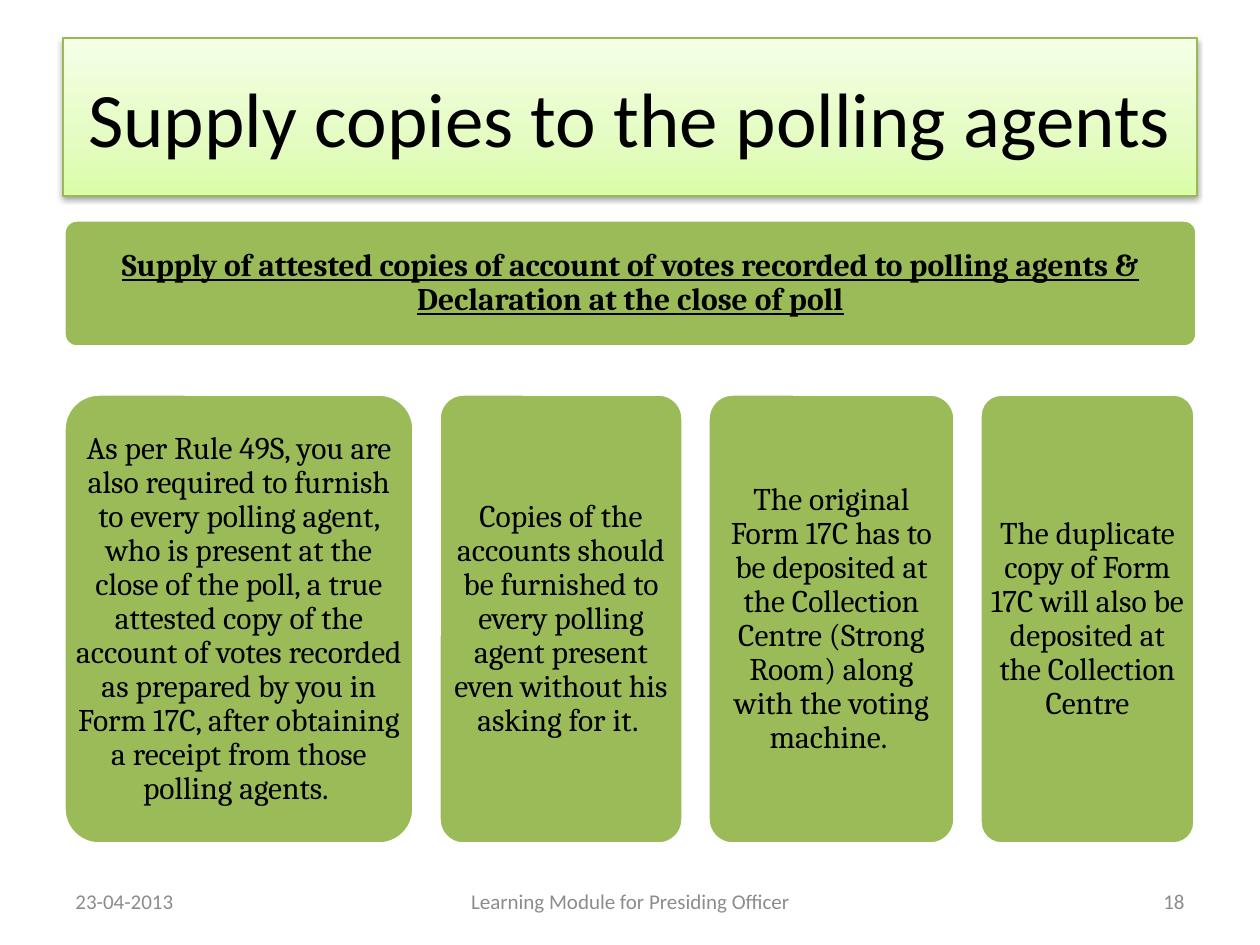
"""Build the slide on supplying copies of the account of votes to polling agents."""
from copy import deepcopy

from lxml import etree
from pptx import Presentation
from pptx import util as u
from pptx.dml.color import RGBColor
from pptx.enum import shapes, text
from pptx.oxml.ns import qn

PX = 914400 / 126
WIDTH, HEIGHT = 1260, 945
LEFT, GAP = 64, 25
BANNER_TOP, BANNER_HEIGHT, BANNER_WIDTH = 220, 127, 1133
CARD_TOP, CARD_HEIGHT = 394, 450
MARGIN, CORNER = 9, 0.1
GREEN, BLACK, WHITE, GREY = "9BBB59", "000000", "FFFFFF", "8C8C8C"

TITLE = "Supply copies to the polling agents"
TITLE_FRAME = (63, 38, 1134, 158)
TITLE_GRADIENT = [(0, "DAFDA7"), (0.35, "E4FCC2"), (1, "F5FFE7")]
BANNER = ("Supply of attested copies of account of votes recorded to polling agents "
          "& Declaration at the close of poll")
CARDS = [
    (350, "As per Rule 49S, you are also required to furnish to every polling agent, "
          "who is present at the close of the poll, a true attested copy of the account "
          "of votes recorded as prepared by you in Form 17C, after obtaining a receipt "
          "from those polling agents. "),
    (244, "Copies of the accounts should be furnished to every polling agent present "
          "even without his asking for it. "),
    (247, "The original Form 17C has to be deposited at the Collection Centre "
          "(Strong Room) along with the voting machine. "),
    (215, "The duplicate copy of Form 17C will also be deposited at the Collection Centre"),
]
FOOTER_TOP, FOOTER_HEIGHT = 876, 50
FOOTERS = [
    (63, 294, "23-04-2013", text.PP_ALIGN.LEFT),
    (431, 399, "Learning Module for Presiding Officer", text.PP_ALIGN.CENTER),
    (903, 294, "18", text.PP_ALIGN.RIGHT),
]


def px(value):
    return u.Emu(round(value * PX))


def color(value):
    return RGBColor.from_string(value)


def write(box, words, font, size, ink, align=text.PP_ALIGN.CENTER):
    frame = box.text_frame
    frame.word_wrap = True
    frame.vertical_anchor = text.MSO_ANCHOR.MIDDLE
    frame.text = words
    para = frame.paragraphs[0]
    para.alignment = align
    span = para.runs[0]
    span.font.name, span.font.size = font, u.Pt(size)
    span.font.color.rgb = color(ink)
    return para


def add_box(page, kind, frame, line, weight):
    box = page.shapes.add_shape(kind, *map(px, frame))
    box.shadow.inherit = False
    box.line.color.rgb = color(line)
    box.line.width = u.Pt(weight)
    return box


def add_title(page):
    box = add_box(page, shapes.MSO_SHAPE.RECTANGLE, TITLE_FRAME, "98B955", 0.75)
    box.fill.gradient()
    box.fill.gradient_angle = 90
    first = box.fill.gradient_stops[0]._gs
    first.addnext(deepcopy(first))
    for stop, (position, tint) in zip(box.fill.gradient_stops, TITLE_GRADIENT):
        stop.position = position
        stop.color.rgb = color(tint)
    effects = box._element.spPr.find(qn("a:effectLst"))
    shadow = etree.SubElement(effects, qn("a:outerShdw"), blurRad=str(u.Pt(3.1)),
                              dist=str(u.Pt(1.6)), dir="5400000", rotWithShape="0")
    tint = etree.SubElement(shadow, qn("a:srgbClr"), val=BLACK)
    etree.SubElement(tint, qn("a:alpha"), val="38000")
    write(box, TITLE, "Calibri", 44, BLACK)


def add_card(page, frame, words):
    box = add_box(page, shapes.MSO_SHAPE.ROUNDED_RECTANGLE, frame, WHITE, 2)
    box.adjustments[0] = CORNER
    box.fill.solid()
    box.fill.fore_color.rgb = color(GREEN)
    inset = px(max(0, MARGIN - 0.29 * CORNER * min(frame[2:])))
    body = box.text_frame
    body.margin_left = body.margin_right = body.margin_top = body.margin_bottom = inset
    para = write(box, words, "Cambria", 18, BLACK)
    para.line_spacing = 0.9
    return para.runs[0]


def main():
    deck = Presentation()
    deck.slide_width, deck.slide_height = px(WIDTH), px(HEIGHT)
    page = deck.slides.add_slide(deck.slide_layouts[6])
    add_title(page)

    span = add_card(page, (LEFT, BANNER_TOP, BANNER_WIDTH, BANNER_HEIGHT), BANNER)
    span.font.bold = span.font.underline = True

    left = LEFT
    for width, words in CARDS:
        add_card(page, (left, CARD_TOP, width, CARD_HEIGHT), words)
        left += width + GAP

    for left, width, words, align in FOOTERS:
        box = page.shapes.add_textbox(*map(px, (left, FOOTER_TOP, width, FOOTER_HEIGHT)))
        write(box, words, "Calibri", 12, GREY, align)

    deck.save("out.pptx")


if __name__ == "__main__":
    main()
